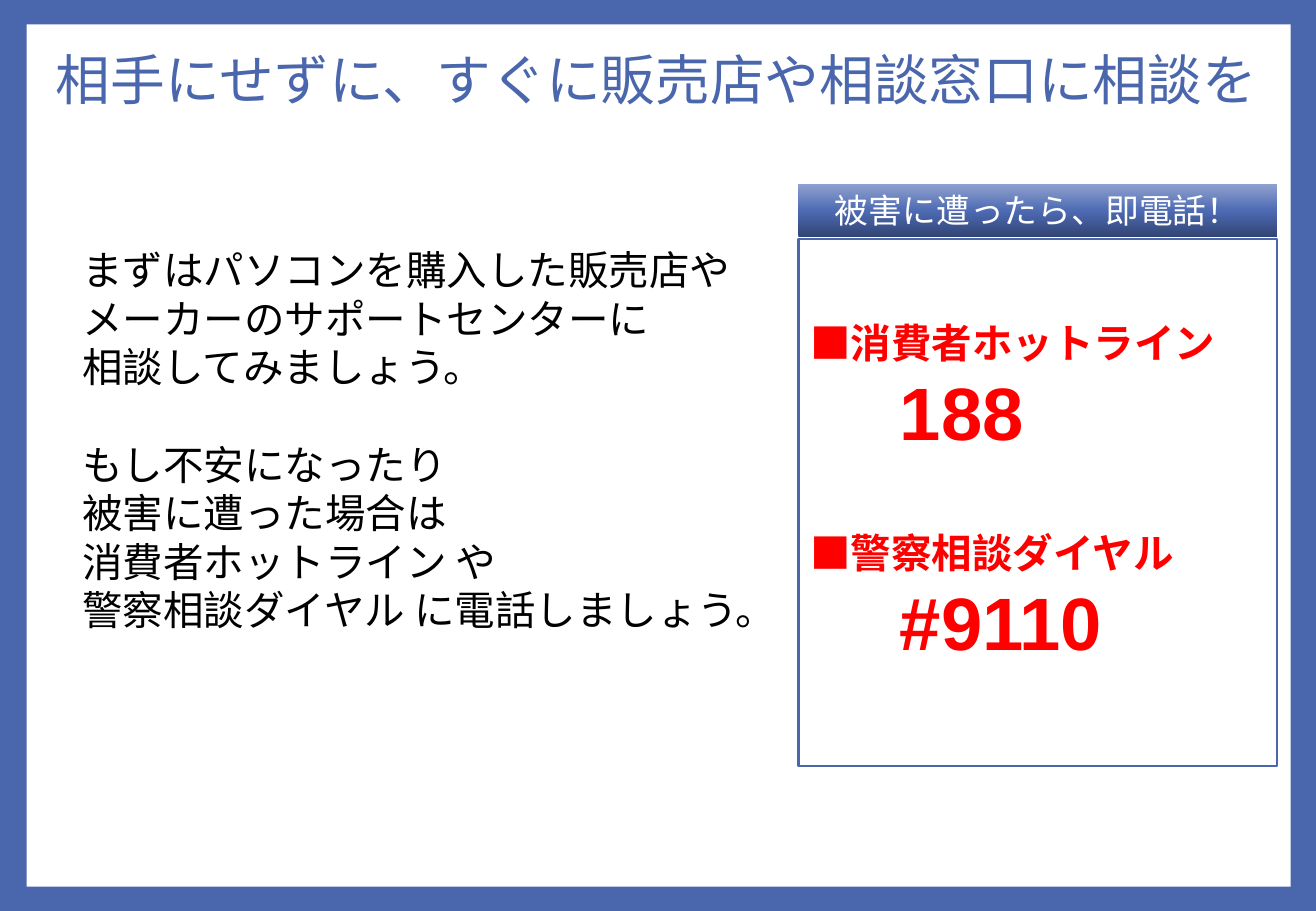
from copy import deepcopy

from pptx import Presentation
from pptx import util as u
from pptx.dml.color import RGBColor
from pptx.enum import shapes, text
from pptx.oxml.ns import qn

COLORS = {
    "blue": "4A66AC", "white": "FFFFFF", "black": "000000", "red": "FF0000",
    "dark": "324473", "middle": "4C69B2", "light": "90A2CF",
}


def color(name):
    return RGBColor.from_string(COLORS[name])


def write(box, lines, font, name, align=text.PP_ALIGN.LEFT):
    """Fill a box with (text, size, space before, bold, indent) lines."""
    frame = box.text_frame
    frame.word_wrap = True
    for index, (words, size, before, bold, indent) in enumerate(lines):
        para = frame.paragraphs[0] if index == 0 else frame.add_paragraph()
        para.alignment = align
        para.space_before = u.Pt(before)
        if indent:
            para._p.get_or_add_pPr().set("marL", str(u.Cm(indent)))
        span = para.add_run()
        span.text = words
        formats = {"name": font, "size": u.Pt(size), "bold": bold}
        for key, value in formats.items():
            setattr(span.font, key, value)
        span.font.color.rgb = color(name)


deck = Presentation()
deck.slide_width, deck.slide_height = u.Cm(27.51), u.Cm(19.05)
page = deck.slides.add_slide(deck.slide_layouts[5])
page.background.fill.solid()
page.background.fill.fore_color.rgb = color("blue")

# White panel, hotline frame and its header bar
panel, hotlines, header = [
    page.shapes.add_shape(shapes.MSO_SHAPE.RECTANGLE, *map(u.Cm, place))
    for place in [
        (0.56, 0.51, 26.42, 18.03),
        (16.69, 5, 10.01, 11.02),
        (16.69, 3.84, 10.01, 1.12),
    ]
]
for box in (panel, hotlines, header):
    box.shadow.inherit = False
    box.fill.solid()
    box.fill.fore_color.rgb = color("white")
    box.line.fill.background()
page.shapes._spTree.insert(2, panel._element)

# Title
title = page.shapes.title
title.left, title.top, title.width, title.height = map(
    u.Cm, (0.91, 0.81, 26.04, 1.83))
write(title, [("相手にせずに、すぐに販売店や相談窓口に相談を", 32.4, 0, False, 0)],
      "Calibri", "blue")
title.text_frame.vertical_anchor = text.MSO_ANCHOR.MIDDLE
title.text_frame.auto_size = text.MSO_AUTO_SIZE.NONE
title.text_frame.paragraphs[0].line_spacing = 0.9

# Advice
advice = page.shapes.add_textbox(*map(u.Cm, (1.47, 5, 14.66, 8.46)))
write(advice, [
    ("まずはパソコンを購⼊した販売店やメーカーのサポートセンターに", 24, 0, False, 0),
    ("相談してみましょう。", 24, 0, False, 0),
    ("もし不安になったり", 24, 29, False, 0),
    ("被害に遭った場合は", 24, 0, False, 0),
    ("消費者ホットライン や", 24, 0, False, 0),
    ("警察相談ダイヤル に電話しましょう。", 24, 0, False, 0),
], "Arial", "black")

# Hotline numbers
hotlines.line.color.rgb = color("blue")
hotlines.line.width = u.Pt(1.5)
hotlines.text_frame.vertical_anchor = text.MSO_ANCHOR.TOP
hotlines.text_frame.margin_top = u.Cm(1.65)
write(hotlines, [
    ("■消費者ホットライン", 24, 0, True, 0),
    ("188", 44, 0, True, 1.87),
    ("■警察相談ダイヤル", 24, 43, True, 0),
    ("#9110", 44, 0, True, 1.87),
], "Arial", "red")

# Header bar, dark at the bottom and light at the top
header.fill.gradient()
header.fill.gradient_angle = 90
stop_list = header._element.spPr.find(".//" + qn("a:gsLst"))
stop_list.append(deepcopy(stop_list[-1]))
stops = [(0, "dark"), (0.48, "middle"), (1, "light")]
for stop, (position, name) in zip(header.fill.gradient_stops, stops):
    stop.position = position
    stop.color.rgb = color(name)
header.text_frame.vertical_anchor = text.MSO_ANCHOR.MIDDLE
write(header, [("被害に遭ったら、即電話！", 20, 0, False, 0)],
      "Calibri", "white", text.PP_ALIGN.CENTER)

deck.save("out.pptx")
